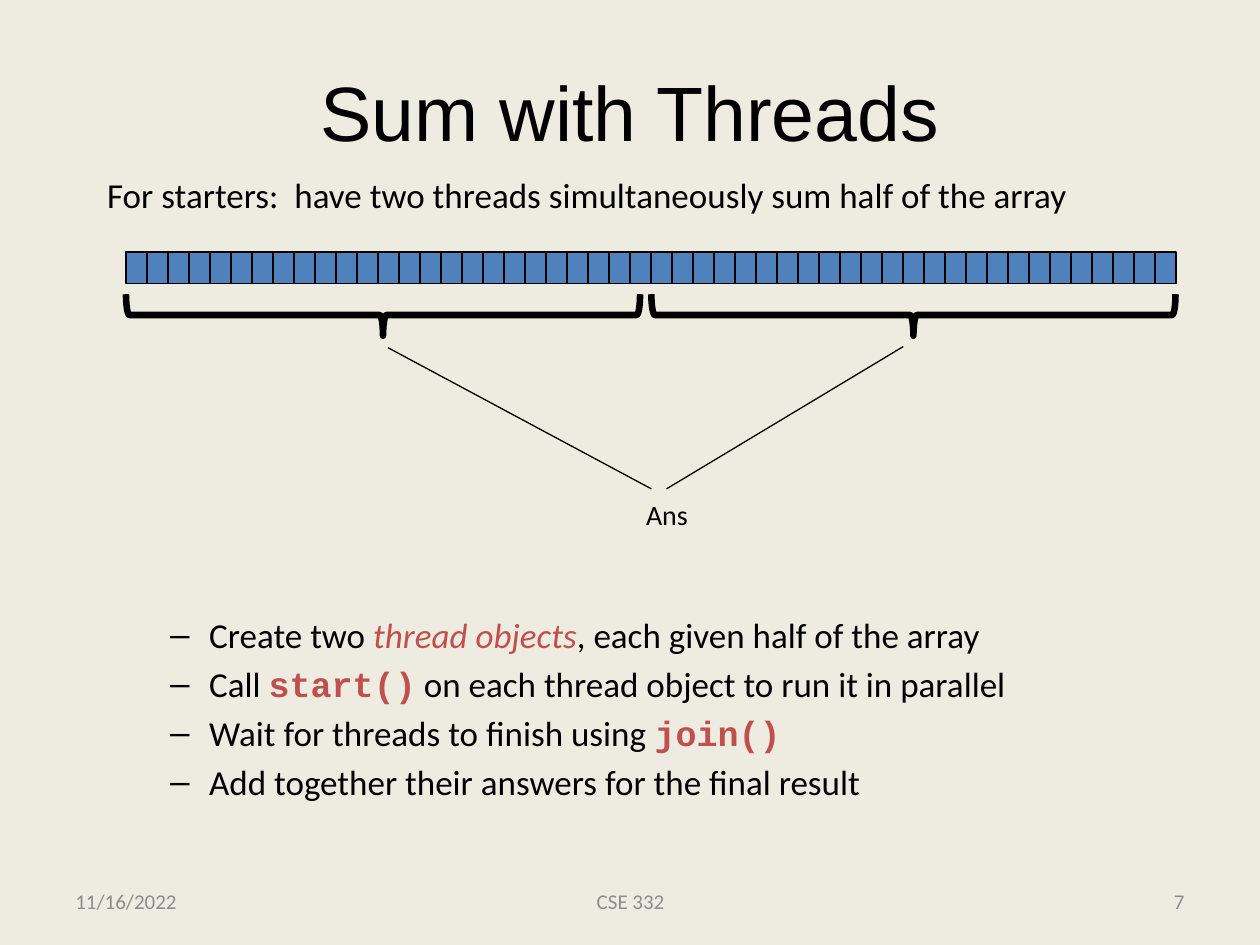
import pptx
import pptx.util
import pptx.dml.color
import pptx.enum.shapes
import pptx.enum.text
import pptx.oxml.ns
import lxml.etree

Inches = pptx.util.Inches
Pt = pptx.util.Pt
Shape = pptx.enum.shapes.MSO_SHAPE
Align = pptx.enum.text.PP_ALIGN
Anchor = pptx.enum.text.MSO_ANCHOR
Fit = pptx.enum.text.MSO_AUTO_SIZE

HUES = {"back": "EEECE1", "ink": "000000", "cell": "4F81BD", "key": "C0504D", "foot": "8C8C8C"}
PLAIN = {"face": "Calibri", "hue": "ink"}
TERM = {"face": "Calibri", "hue": "key", "slant": True}
CODE = {"face": "Courier New", "hue": "key", "bold": True}

TITLE = "Sum with Threads"
INTRO = "For starters:  have two threads simultaneously sum half of the array"
STEPS = [
    [("Create two ", PLAIN), ("thread objects", TERM), (", each given half of the array", PLAIN)],
    [("Call ", PLAIN), ("start()", CODE), (" on each thread object to run it in parallel", PLAIN)],
    [("Wait for threads to finish using ", PLAIN), ("join()", CODE)],
    [("Add together their answers for the final result", PLAIN)],
]
COUNT, LEFT, TOP, WIDE, HIGH = 50, 1, 2, 1 / 6, 0.25
HALVES = [(1, 5.08), (5.17, 9.33)]
BRACE = 0.33
LINKS = [((3.08, 2.76), (5.17, 3.88)), ((7.17, 2.75), (5.29, 3.88))]
FOOT = [
    ("11/16/2022", 0.5, 2.33, Align.LEFT),
    ("CSE 332", 3.42, 3.17, Align.CENTER),
    ("7", 7.17, 2.33, Align.RIGHT),
]
GAP = 227


def color(name):
    return pptx.dml.color.RGBColor.from_string(HUES[name])


def add_run(para, text, size, face="Calibri", hue="ink", bold=False, slant=False):
    run = para.add_run()
    run.text = text
    font = run.font
    font.size, font.name, font.bold, font.italic = Pt(size), face, bold, slant
    font.color.rgb = color(hue)


def place(shape, left, top, wide, high):
    shape.left, shape.top = Inches(left), Inches(top)
    shape.width, shape.height = Inches(wide), Inches(high)


def set_line(shape, width):
    shape.line.color.rgb = color("ink")
    shape.line.width = Pt(width)


def add_tag(element, tag, **attrs):
    return lxml.etree.SubElement(element, pptx.oxml.ns.qn(tag), **attrs)


def add_shape(slide, kind, box, width, fill=None):
    shape = slide.shapes.add_shape(kind, *map(Inches, box))
    shape.shadow.inherit = False
    if fill:
        shape.fill.solid()
        shape.fill.fore_color.rgb = color(fill)
    else:
        shape.fill.background()
    set_line(shape, width)
    return shape


def add_text(slide):
    title, body = slide.placeholders
    place(title, 0.75, 0.25, 8.5, 1.25)
    title.text_frame.vertical_anchor = Anchor.MIDDLE
    para = title.text_frame.paragraphs[0]
    para.alignment = Align.CENTER
    add_run(para, TITLE, 44, "Arial")

    place(body, 0.75, 1.33, 9.08, 5.33)
    frame = body.text_frame
    frame.auto_size = Fit.NONE
    para = frame.paragraphs[0]
    para.space_before = Pt(4)
    props = para._p.get_or_add_pPr()
    props.set("marL", "0")
    props.set("indent", "0")
    add_tag(props, "a:buNone")
    add_run(para, INTRO, 20)
    for i, step in enumerate(STEPS):
        para = frame.add_paragraph()
        para.level = 1
        para.space_before = Pt(4 if i else GAP)
        props = para._p.get_or_add_pPr()
        props.set("marL", str(Inches(0.81)))
        props.set("indent", str(Inches(-0.31)))
        add_tag(props, "a:buChar", char="–")
        for text, style in step:
            add_run(para, text, 20, **style)


def add_array(slide):
    for i in range(COUNT):
        add_shape(slide, Shape.RECTANGLE, (LEFT + i * WIDE, TOP, WIDE, HIGH), 0.75, "cell")
    for start, end in HALVES:
        span = end - start
        box = ((start + end - BRACE) / 2, 2.5 - span / 2, BRACE, span)
        brace = add_shape(slide, Shape.LEFT_BRACE, box, 3.75)
        brace.rotation = 270
        brace.adjustments[0] = 0.083
        brace.adjustments[1] = 0.5
    for start, end in LINKS:
        link = slide.shapes.add_connector(
            pptx.enum.shapes.MSO_CONNECTOR.STRAIGHT, *map(Inches, start + end))
        set_line(link, 0.75)
        add_tag(link._element.spPr, "a:effectLst")


def add_labels(slide):
    box = slide.shapes.add_textbox(*map(Inches, (5.03, 3.93, 0.54, 0.34)))
    box.text_frame.word_wrap = False
    box.text_frame.auto_size = Fit.SHAPE_TO_FIT_TEXT
    para = box.text_frame.paragraphs[0]
    para.line_spacing = 0.9
    para.space_before = Pt(8)
    add_run(para, "Ans", 16)
    for text, left, wide, align in FOOT:
        box = slide.shapes.add_textbox(*map(Inches, (left, 6.95, wide, 0.4)))
        box.text_frame.word_wrap = True
        box.text_frame.vertical_anchor = Anchor.MIDDLE
        para = box.text_frame.paragraphs[0]
        para.alignment = align
        add_run(para, text, 12, hue="foot")


def main():
    deck = pptx.Presentation()
    deck.slide_width, deck.slide_height = Inches(10), Inches(7.5)
    slide = deck.slides.add_slide(deck.slide_layouts[1])
    slide.background.fill.solid()
    slide.background.fill.fore_color.rgb = color("back")
    add_text(slide)
    add_array(slide)
    add_labels(slide)
    deck.save("out.pptx")


if __name__ == "__main__":
    main()
